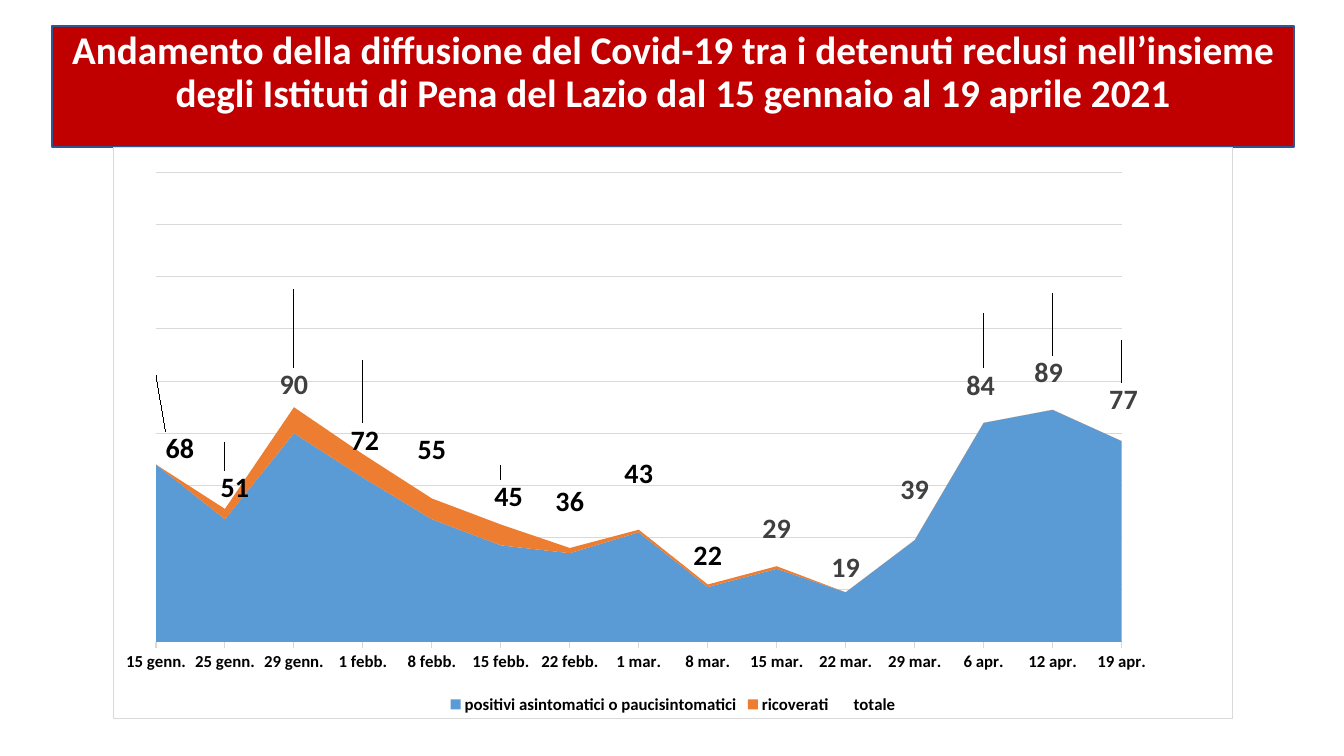
from lxml.etree import fromstring
from pptx import Presentation
from pptx.chart.data import CategoryChartData
from pptx.dml.color import RGBColor
from pptx.enum.chart import XL_CHART_TYPE, XL_LEGEND_POSITION, XL_TICK_MARK
from pptx.enum.shapes import MSO_SHAPE
from pptx.enum.text import MSO_ANCHOR, PP_ALIGN
from pptx.oxml.ns import nsdecls
from pptx.util import Pt

EMU_PER_PX = 914400 / 100.8
FONT = "Calibri"
COLORS = {
    "banner": "C00000", "banner_line": "325491", "white": "FFFFFF",
    "black": "000000", "gray": "404040", "grid": "D9D9D9",
    "positive": "5B9BD5", "hospital": "ED7D31",
}


def px(*lengths):
    return [round(length * EMU_PER_PX) for length in lengths]


def write(target, text=None, size=12, color="black", bold=True):
    """Format a run or a chart text, and fill in its wording if given."""
    if text is not None:
        target.text = text
    target.font.name = FONT
    target.font.size = Pt(size)
    target.font.bold = bold
    target.font.color.rgb = RGBColor.from_string(COLORS[color])


presentation = Presentation()
presentation.slide_width, presentation.slide_height = px(1344, 756)
slide = presentation.slides.add_slide(presentation.slide_layouts[6])

# Title banner
banner = slide.shapes.add_shape(MSO_SHAPE.RECTANGLE, *px(52, 26, 1242, 121))
banner.shadow.inherit = False
banner.fill.solid()
banner.fill.fore_color.rgb = RGBColor.from_string(COLORS["banner"])
banner.line.color.rgb = RGBColor.from_string(COLORS["banner_line"])
banner.line.width = Pt(1)
banner.text_frame.word_wrap = True
banner.text_frame.vertical_anchor = MSO_ANCHOR.TOP
title = banner.text_frame.paragraphs[0]
title.alignment = PP_ALIGN.CENTER
title.line_spacing = 0.9
title.space_before = Pt(10)
write(title.add_run(),
      "Andamento della diffusione del Covid-19 tra i detenuti reclusi nell’insieme "
      "degli Istituti di Pena del Lazio dal 15 gennaio al 19 aprile 2021",
      size=28, color="white")

# Stacked areas
totals = [68, 51, 90, 72, 55, 45, 36, 43, 22, 29, 19, 39, 84, 89, 77]
cases = CategoryChartData()
cases.categories = [
    "15 genn.", "25 genn.", "29 genn.", "1 febb.", "8 febb.", "15 febb.", "22 febb.",
    "1 mar.", "8 mar.", "15 mar.", "22 mar.", "29 mar.", "6 apr.", "12 apr.", "19 apr.",
]
cases.add_series("positivi asintomatici o paucisintomatici",
                 [68, 47, 80, 63, 47, 37, 34, 42, 21, 28, 19, 39, 84, 89, 77])
cases.add_series("ricoverati", [0, 4, 10, 9, 8, 8, 2, 1, 1, 1, 0, 0, None, None, None])
cases.add_series("totale", totals)

CHART_WIDTH, CHART_HEIGHT = 1120, 572
chart = slide.shapes.add_chart(
    XL_CHART_TYPE.AREA_STACKED, *px(113, 147, CHART_WIDTH, CHART_HEIGHT), cases).chart
write(chart, size=10, bold=False)
chart.has_title = False
chart.has_legend = True
chart.legend.position = XL_LEGEND_POSITION.BOTTOM
chart.legend.include_in_layout = False
write(chart.legend)
chart.plots[0].vary_by_categories = False

dates = chart.category_axis
dates.major_tick_mark = XL_TICK_MARK.OUTSIDE
dates.has_major_gridlines = False
write(dates.tick_labels)
counts = chart.value_axis
counts.visible = False
counts.minimum_scale, counts.maximum_scale, counts.major_unit = 0, 180, 20
counts.has_major_gridlines = True
for line in (dates.format.line, counts.major_gridlines.format.line):
    line.color.rgb = RGBColor.from_string(COLORS["grid"])
    line.width = Pt(0.75)
for cross in chart._chartSpace.xpath(".//c:crossBetween"):
    cross.set("val", "midCat")

positive, hospital, total = chart.plots[0].series
for series, color in ((positive, "positive"), (hospital, "hospital")):
    series.format.fill.solid()
    series.format.fill.fore_color.rgb = RGBColor.from_string(COLORS[color])
total.format.fill.background()
total.format.line.fill.background()

# Labels of the totals, moved in px from the middle of their band
total.data_labels.show_value = True
write(total.data_labels, size=20, color="gray")
label_shifts = {
    0: (24, 73), 1: (10, 45), 2: (0, 95), 3: (2, 80), 4: (0, 23), 5: (8, 31),
    6: (0, 0), 7: (0, 0), 8: (0, 0), 12: (-3, 72), 13: (-4, 79), 14: (2, 59),
}
for index, (right, down) in label_shifts.items():
    color = "black" if index < 9 and index != 2 else "gray"
    write(total.points[index].data_label, size=20, color=color)
    position = total._element.xpath(f".//c:dLbl/c:idx[@val='{index}']")[0]
    position.addnext(fromstring(
        f'<c:layout {nsdecls("c")}><c:manualLayout>'
        f'<c:x val="{right / CHART_WIDTH:.4f}"/><c:y val="{down / CHART_HEIGHT:.4f}"/>'
        '</c:manualLayout></c:layout>'))

# Plot position and chart frame
plot_area = chart._chartSpace.xpath("c:chart/c:plotArea")[0]
for layout in plot_area.xpath("c:layout"):
    plot_area.remove(layout)
plot_area.insert(0, fromstring(
    f'<c:layout {nsdecls("c")}><c:manualLayout><c:layoutTarget val="inner"/>'
    '<c:xMode val="edge"/><c:yMode val="edge"/><c:x val="0.038"/><c:y val="0.044"/>'
    '<c:w val="0.863"/><c:h val="0.822"/></c:manualLayout></c:layout>'))
chart._chartSpace.xpath("c:chart")[0].addnext(fromstring(
    f'<c:spPr {nsdecls("c", "a")}>'
    f'<a:solidFill><a:srgbClr val="{COLORS["white"]}"/></a:solidFill>'
    f'<a:ln w="{Pt(0.75)}"><a:solidFill><a:srgbClr val="{COLORS["grid"]}"/></a:solidFill></a:ln>'
    '</c:spPr>'))

presentation.save("out.pptx")
